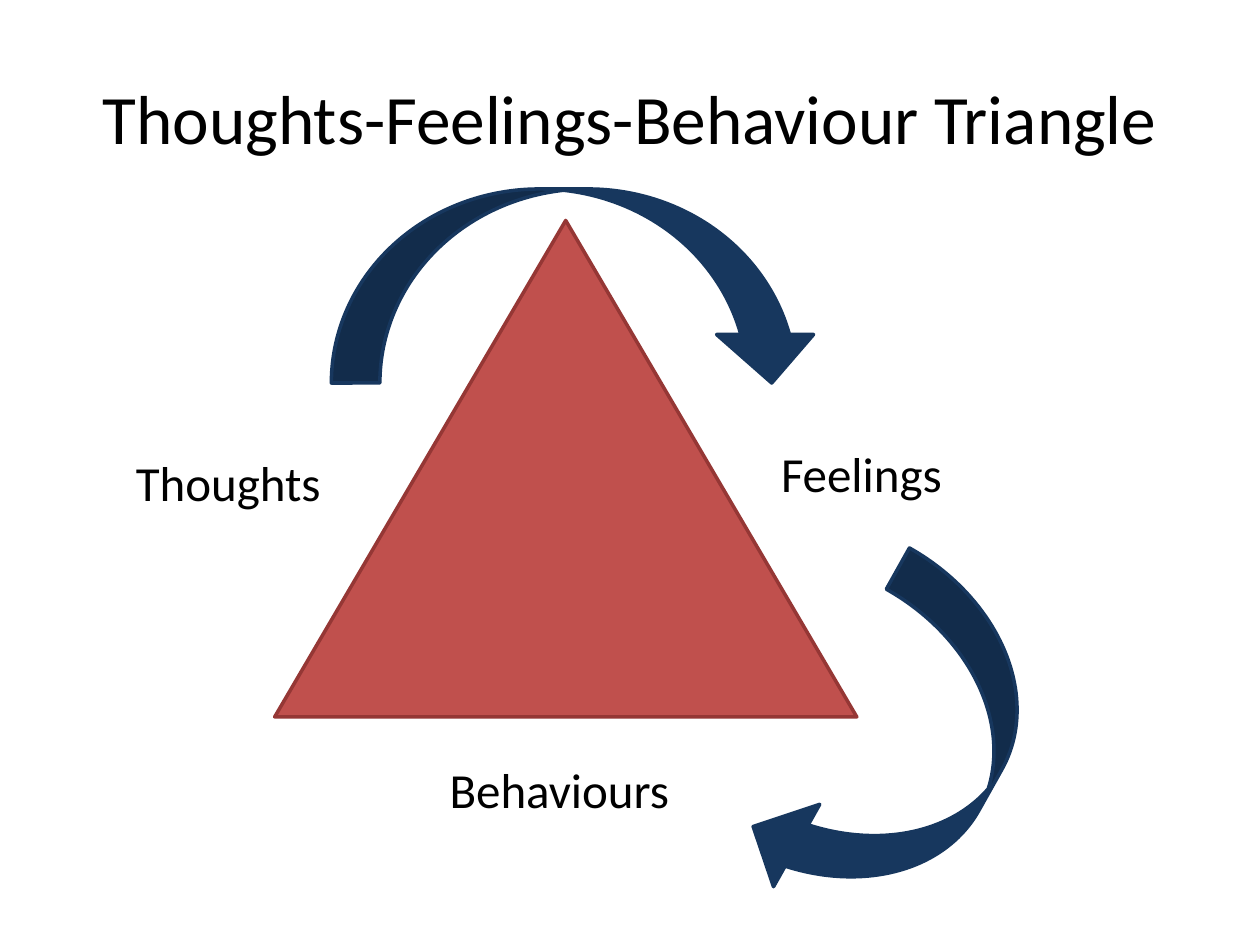
import pptx
import pptx.util
import pptx.dml.color
import pptx.enum.shapes
import pptx.enum.text

Inches = pptx.util.Inches
KIND = pptx.enum.shapes.MSO_SHAPE
ALIGN = pptx.enum.text.PP_ALIGN
ANCHOR = pptx.enum.text.MSO_ANCHOR

RED, EDGE, NAVY, BLACK = "C0504D", "953735", "17375E", "000000"

title = ("Thoughts-Feelings-Behaviour Triangle", (0.5, 0.3, 9, 1.25), 39.6)
labels = [
    ("Thoughts", (0.98, 3.54, 1.7, 0.57)),
    ("Feelings", (6.1, 3.47, 3.18, 0.57)),
    ("Behaviours", (3.47, 5.98, 2.06, 0.57)),
]
shapes = [
    (KIND.ISOSCELES_TRIANGLE, (2.18, 1.75, 4.62, 3.94), 0, RED, EDGE),
    (KIND.CURVED_DOWN_ARROW, (2.63, 1.5, 3.88, 1.54), 0, NAVY, NAVY),
    (KIND.CURVED_LEFT_ARROW, (6.41, 4.53, 1.5, 2.91), 29.3, NAVY, NAVY),
]


def color(code):
    return pptx.dml.color.RGBColor.from_string(code)


def add_text(slide, text, box, size, align, anchor):
    frame = slide.shapes.add_textbox(*map(Inches, box)).text_frame
    frame.word_wrap = True
    frame.vertical_anchor = anchor
    para = frame.paragraphs[0]
    para.alignment = align
    run = para.add_run()
    run.text = text
    run.font.name = "Calibri"
    run.font.size = pptx.util.Pt(size)
    run.font.color.rgb = color(BLACK)


def add_form(slide, kind, box, turn, fill, line):
    form = slide.shapes.add_shape(kind, *map(Inches, box))
    form.rotation = turn
    form.shadow.inherit = False
    form.fill.solid()
    form.fill.fore_color.rgb = color(fill)
    form.line.color.rgb = color(line)
    form.line.width = pptx.util.Pt(2)


def main():
    deck = pptx.Presentation()
    deck.slide_width, deck.slide_height = Inches(10), Inches(7.5)
    slide = deck.slides.add_slide(deck.slide_layouts[6])
    add_text(slide, *title, ALIGN.CENTER, ANCHOR.MIDDLE)
    add_form(slide, *shapes[0])
    for text, box in labels:
        add_text(slide, text, box, 28, ALIGN.LEFT, ANCHOR.TOP)
    for arrow in shapes[1:]:
        add_form(slide, *arrow)
    deck.save("out.pptx")


if __name__ == "__main__":
    main()
